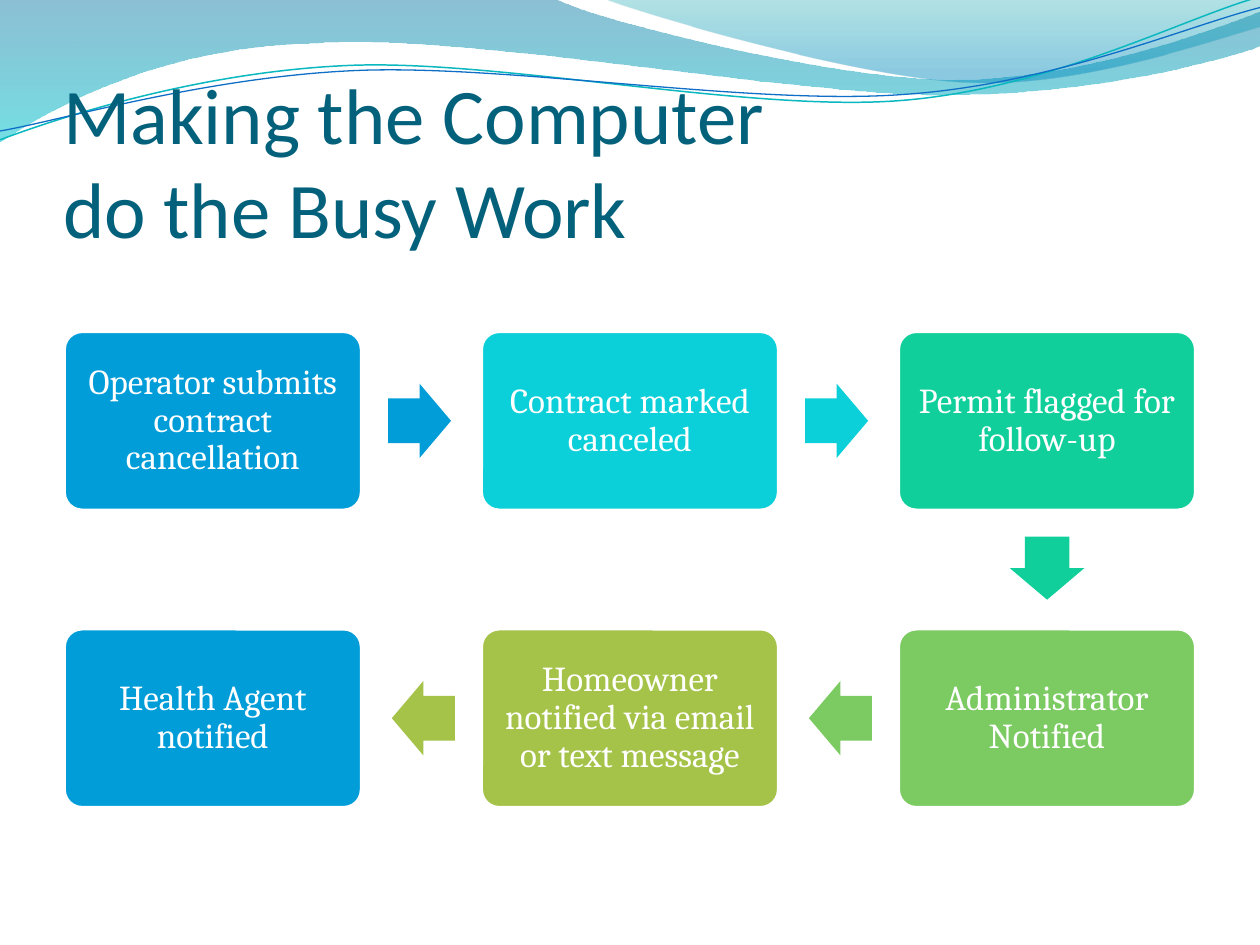
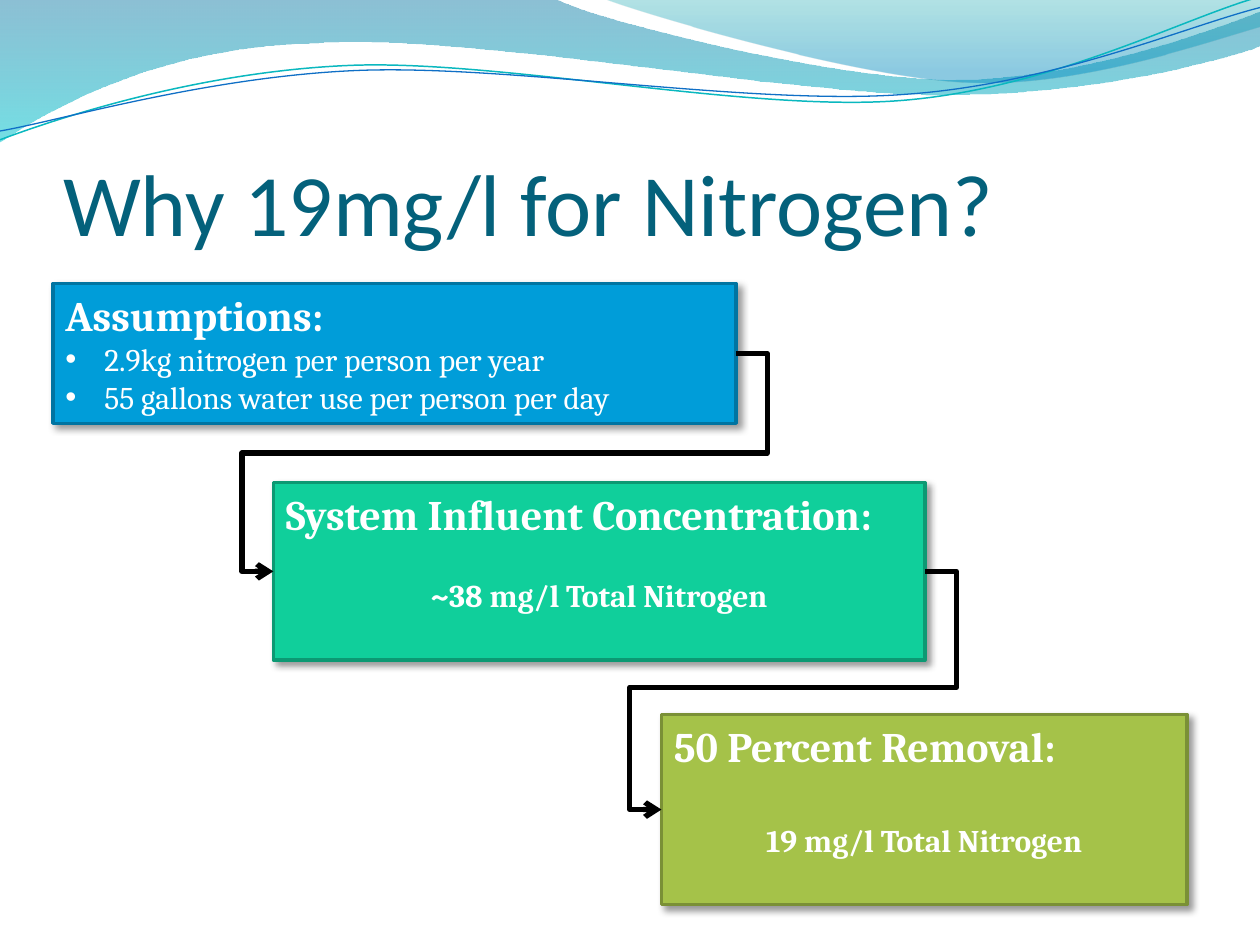
from itertools import pairwise

from lxml import etree
from pptx import Presentation
from pptx.dml.color import RGBColor
from pptx.enum.shapes import MSO_CONNECTOR, MSO_SHAPE
from pptx.enum.text import MSO_ANCHOR, MSO_AUTO_SIZE, PP_ALIGN
from pptx.oxml.ns import qn
from pptx.util import Inches, Pt

ROUNDED, RECTANGLE, ARROW = (
    MSO_SHAPE.ROUNDED_RECTANGLE, MSO_SHAPE.RECTANGLE, MSO_SHAPE.RIGHT_ARROW)
TOP, MIDDLE, BOTTOM = MSO_ANCHOR.TOP, MSO_ANCHOR.MIDDLE, MSO_ANCHOR.BOTTOM
LEFT, CENTER = PP_ALIGN.LEFT, PP_ALIGN.CENTER
ELBOW, FIXED = MSO_CONNECTOR.ELBOW, MSO_AUTO_SIZE.NONE

COLORS = {
    "title": "04617B", "white": "FFFFFF", "black": "000000",
    "blue": "009DD9", "cyan": "0BD0D9", "teal": "10CF9B",
    "green": "7CCA62", "olive": "A5C249",
    "blue edge": "0074A1", "teal edge": "0C9973", "olive edge": "7A9036",
    "wave top": "0074A1", "wave bottom": "00C6CF",
    "crest top": "00A1A9", "crest bottom": "008BBF",
    "upper line": "0AB8BF", "lower line": "0F6FC6",
}
TITLE_FONT, BODY_FONT = "Calibri", "Cambria"

# Each outline starts at a point; two numbers draw a line, six draw a curve.
# Gradient stops are (position, colour, opacity in percent).
WAVES = [
    {"outline": [(0, 0), (4.4, -0.01), (4.76, 0.17, 6.64, 0.63, 7.58, 0.63),
                 (8.53, 0.63, 9.58, 0.26, 10, 0.09), (10.01, 0.36),
                 (9.83, 0.44, 8.7, 0.76, 7.46, 0.75),
                 (6.22, 0.75, 3.82, 0.28, 2.57, 0.34),
                 (1.29, 0.36, 0.46, 0.83, -0.01, 1.13)],
     "stops": [(0, "wave top", 45), (1, "wave bottom", 55)]},
    {"outline": [(4.79, -0.01), (5.09, 0.11, 6.82, 0.62, 7.69, 0.65),
                 (8.56, 0.69, 9.61, 0.32, 10, 0.21), (10, 0)],
     "stops": [(0, "crest top", 30), (0.8, "crest bottom", 45)]},
    {"outline": [(0, 1.11), (0.48, 0.93, 1.58, 0.57, 2.77, 0.52),
                 (3.95, 0.47, 5.93, 0.89, 7.13, 0.8),
                 (8.33, 0.71, 9.38, 0.15, 9.98, -0.02)],
     "line": ("upper line", 0.85)},
    {"outline": [(0, 1.04), (0.47, 0.96, 1.64, 0.61, 2.83, 0.56),
                 (4.03, 0.51, 5.97, 0.84, 7.17, 0.75),
                 (8.36, 0.67, 9.41, 0.21, 10, 0.06)],
     "line": ("lower line", 0.75)},
]

WORKFLOW_TITLE = ["Making the Computer", "do the Busy Work"]
WORKFLOW = [
    ("Operator submits contract cancellation", "blue"),
    ("Contract marked canceled", "cyan"),
    ("Permit flagged for follow-up", "teal"),
    ("Administrator Notified", "green"),
    ("Homeowner notified via email or text message", "olive"),
    ("Health Agent notified", "blue"),
]
COLUMNS = 3
GRID_LEFT, GRID_TOP, COLUMN_STEP, ROW_STEP = 0.51, 2.63, 3.31, 2.36
STEP_WIDTH, STEP_HEIGHT = 2.36, 1.42
ARROW_WIDTH, ARROW_HEIGHT, ARROW_GAP = 0.5, 0.59, 0.21

NITROGEN_TITLE = ["Why 19mg/l for Nitrogen?"]
CASCADE = [
    {"at": (0.42, 2.25, 5.42, 1.11), "color": "blue", "heading": "Assumptions:",
     "bullets": ["2.9kg nitrogen per person per year",
                 "55 gallons water use per person per day"]},
    {"at": (2.17, 3.83, 5.17, 1.41), "color": "teal",
     "heading": "System Influent Concentration:",
     "result": "~38 mg/l Total Nitrogen", "gap": 21},
    {"at": (5.25, 5.67, 4.17, 1.51), "color": "olive",
     "heading": "50 Percent Removal:",
     "result": "19 mg/l Total Nitrogen", "gap": 28.5},
]
ELBOW_REACH = 0.25


def rgb(name):
    return RGBColor.from_string(COLORS[name])


def apply(target, formats):
    for name, value in formats.items():
        setattr(target, name, value)


def add_child(parent, tag, **attributes):
    return etree.SubElement(parent, qn(tag), attributes)


def set_line(shape, color, width):
    shape.line.color.rgb = rgb(color)
    shape.line.width = Pt(width)


def add_span(para, text, size, color="white", font=BODY_FONT, bold=False):
    span = para.add_run()
    span.text = text
    apply(span.font, {"name": font, "size": Pt(size), "bold": bold})
    span.font.color.rgb = rgb(color)


def add_shadow(shape):
    effects = shape.element.spPr.find(qn("a:effectLst"))
    shadow = add_child(effects, "a:outerShdw", blurRad=str(Pt(4)),
                       dist=str(Pt(3)), dir=str(45 * 60000), rotWithShape="0")
    black = add_child(shadow, "a:srgbClr", val=COLORS["black"])
    add_child(black, "a:alpha", val="40000")


def add_box(slide, kind, at, color):
    box = slide.shapes.add_shape(kind, *map(Inches, at))
    box.shadow.inherit = False
    box.fill.solid()
    box.fill.fore_color.rgb = rgb(color)
    box.line.fill.background()
    return box


def add_curve_shape(slide, outline, closed):
    """Draw the control points as lines, then merge threes into cubic curves."""
    points = [(Inches(x), Inches(y)) for segment in outline
              for x, y in zip(segment[::2], segment[1::2])]
    builder = slide.shapes.build_freeform(*points[0])
    builder.add_line_segments(points[1:], close=closed)
    shape = builder.convert_to_shape()
    lines = iter(list(shape.element.iter(qn("a:lnTo"))))
    for segment in outline[1:]:
        first = next(lines)
        if len(segment) == 6:
            first.tag = qn("a:cubicBezTo")
            for _ in range(2):
                extra = next(lines)
                first.append(extra[0])
                extra.getparent().remove(extra)
    return shape


def add_wave(slide, outline, stops=None, line=None):
    wave = add_curve_shape(slide, outline, bool(stops))
    wave.shadow.inherit = False
    if line:
        wave.fill.background()
        set_line(wave, *line)
        return wave
    wave.line.fill.background()
    wave.fill.gradient()
    wave.fill.gradient_angle = 270
    for stop, (position, color, _) in zip(wave.fill.gradient_stops, stops):
        stop.position = position
        stop.color.rgb = rgb(color)
    for tint, stop in zip(wave.element.spPr.iter(qn("a:srgbClr")), stops):
        add_child(tint, "a:alpha", val=str(stop[2] * 1000))
    return wave


def move_to_master(deck, waves):
    tree = deck.slide_master.shapes.element
    for number, wave in enumerate(waves):
        wave.element.nvSpPr.cNvPr.set("id", str(100 + number))
        tree.insert(2 + number, wave.element)


def place_title(layout):
    title = next(iter(layout.placeholders))
    apply(title, {"left": Inches(0.5), "top": Inches(0.77),
                  "width": Inches(9), "height": Inches(1.25)})
    apply(title.text_frame, {
        "margin_left": 0, "margin_right": 0, "margin_bottom": 0,
        "margin_top": Inches(0.05), "vertical_anchor": BOTTOM,
        "word_wrap": True, "auto_size": FIXED})


def add_titled_slide(deck, layout, lines, size):
    slide = deck.slides.add_slide(layout)
    frame = slide.shapes.title.text_frame
    frame.auto_size = FIXED
    para = frame.paragraphs[0]
    para.alignment = LEFT
    for number, line in enumerate(lines):
        if number:
            para.add_line_break()
        add_span(para, line, size, "title", TITLE_FONT)
    return slide


def grid_cell(number):
    """Column and row of a step; odd rows run right to left."""
    row, column = divmod(number, COLUMNS)
    return (COLUMNS - 1 - column if row % 2 else column), row


def add_step(slide, number, text, color):
    column, row = grid_cell(number)
    left, top = GRID_LEFT + column * COLUMN_STEP, GRID_TOP + row * ROW_STEP
    box = add_box(slide, ROUNDED, (left, top, STEP_WIDTH, STEP_HEIGHT), color)
    box.adjustments[0] = 0.1
    set_line(box, "white", 2)
    margin = Inches(0.12)
    apply(box.text_frame, {
        "margin_left": margin, "margin_right": margin, "margin_top": margin,
        "margin_bottom": margin, "word_wrap": True, "vertical_anchor": MIDDLE})
    para = box.text_frame.paragraphs[0]
    apply(para, {"alignment": CENTER, "line_spacing": 0.9})
    add_span(para, text, 20)

    if number + 1 == len(WORKFLOW):
        return
    next_column, next_row = grid_cell(number + 1)
    across, down = next_column - column, next_row - row
    reach = ARROW_GAP + ARROW_WIDTH / 2
    center_x = left + STEP_WIDTH / 2 + across * (STEP_WIDTH / 2 + reach)
    center_y = top + STEP_HEIGHT / 2 + down * (STEP_HEIGHT / 2 + reach)
    arrow = add_box(slide, ARROW, (
        center_x - ARROW_WIDTH / 2, center_y - ARROW_HEIGHT / 2,
        ARROW_WIDTH, ARROW_HEIGHT), color)
    arrow.adjustments[0], arrow.adjustments[1] = 0.6, 0.5
    arrow.rotation = 90 if down else 180 if across < 0 else 0


def add_cascade_box(slide, part):
    box = add_box(slide, RECTANGLE, part["at"], part["color"])
    set_line(box, part["color"] + " edge", 2)
    add_shadow(box)
    frame = box.text_frame
    apply(frame, {"vertical_anchor": TOP, "word_wrap": True})
    para = frame.paragraphs[0]
    para.alignment = LEFT
    add_span(para, part["heading"], 24, bold=True)
    for text in part.get("bullets", []):
        para = frame.add_paragraph()
        para.alignment = LEFT
        add_span(para, text, 18)
        properties = para._p.get_or_add_pPr()
        properties.set("marL", str(Inches(0.31)))
        properties.set("indent", str(-Inches(0.31)))
        add_child(properties, "a:buFont", typeface="Arial")
        add_child(properties, "a:buChar", char="•")
    if "result" in part:
        para = frame.add_paragraph()
        apply(para, {"alignment": CENTER, "space_before": Pt(part["gap"])})
        add_span(para, part["result"], 18, bold=True)
    return box


def join_boxes(slide, upper, lower):
    """Lead from the upper box's right side, between both, to the lower's left."""
    link = slide.shapes.add_connector(ELBOW, 0, 0, 0, 0)
    link.begin_connect(upper, 3)
    link.end_connect(lower, 1)
    set_line(link, "black", 3)
    add_child(link.line._get_or_add_ln(), "a:tailEnd", type="arrow")
    add_child(link.element.spPr, "a:effectLst")
    side = Inches(ELBOW_REACH) / link.width
    between = (upper.top + upper.height + lower.top) / 2
    bends = (-side, (between - link.begin_y) / link.height, 1 + side)
    geometry = link.element.spPr.find(qn("a:prstGeom"))
    geometry.set("prst", "bentConnector5")
    guides = geometry.find(qn("a:avLst"))
    for number, bend in enumerate(bends, 1):
        add_child(guides, "a:gd", name=f"adj{number}",
                  fmla=f"val {round(bend * 100000)}")


def main():
    deck = Presentation()
    deck.slide_width, deck.slide_height = Inches(10), Inches(7.5)
    layout = deck.slide_layouts.get_by_name("Title Only")
    place_title(layout)

    workflow = add_titled_slide(deck, layout, WORKFLOW_TITLE, 45)
    move_to_master(deck, [add_wave(workflow, **wave) for wave in WAVES])
    for number, (text, color) in enumerate(WORKFLOW):
        add_step(workflow, number, text, color)

    nitrogen = add_titled_slide(deck, layout, NITROGEN_TITLE, 50)
    boxes = [add_cascade_box(nitrogen, part) for part in CASCADE]
    for upper, lower in pairwise(boxes):
        join_boxes(nitrogen, upper, lower)
    deck.save("out.pptx")


if __name__ == "__main__":
    main()
